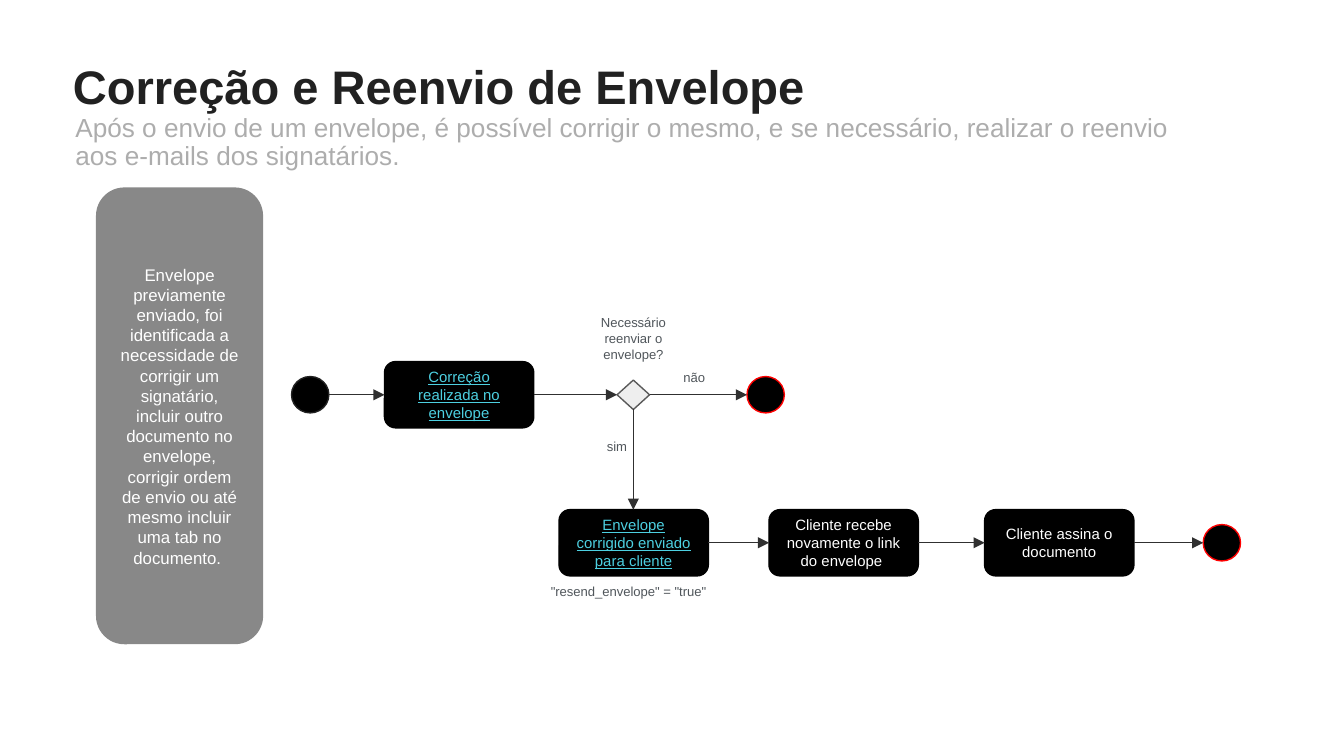
from lxml import etree
from pptx import Presentation
from pptx.dml.color import RGBColor
from pptx.enum.shapes import MSO_CONNECTOR, MSO_SHAPE
from pptx.enum.text import MSO_ANCHOR, MSO_AUTO_SIZE, PP_ALIGN
from pptx.oxml.ns import qn
from pptx.util import Pt

LEFT, CENTER = PP_ALIGN.LEFT, PP_ALIGN.CENTER
TOP, MIDDLE = MSO_ANCHOR.TOP, MSO_ANCHOR.MIDDLE
FIT_SHAPE = MSO_AUTO_SIZE.SHAPE_TO_FIT_TEXT
ROUNDED, OVAL = MSO_SHAPE.ROUNDED_RECTANGLE, MSO_SHAPE.OVAL
DECISION = MSO_SHAPE.FLOWCHART_DECISION
STRAIGHT = MSO_CONNECTOR.STRAIGHT

WHITE = RGBColor(0xFF, 0xFF, 0xFF)
BLACK = RGBColor(0x00, 0x00, 0x00)
INK = RGBColor(0x21, 0x21, 0x21)
SUBTITLE_GRAY = RGBColor(0xAD, 0xAD, 0xAD)
PANEL_GRAY = RGBColor(0x88, 0x88, 0x88)
LABEL_GRAY = RGBColor(0x50, 0x56, 0x5B)
ARROW_GRAY = RGBColor(0x30, 0x30, 0x30)
DIAMOND_FILL = RGBColor(0xEE, 0xEE, 0xEE)
DIAMOND_LINE = RGBColor(0x59, 0x59, 0x59)
CYAN = RGBColor(0x4D, 0xD0, 0xE1)
RED = RGBColor(0xFF, 0x00, 0x00)

FONT = "Arial"
INSET = 7.2
LINE_WIDTH = 0.75
UPPER_ROW, LOWER_ROW = 211.5, 290.8
STEP_WIDTH, STEP_HEIGHT = 80, 35.5
EVENT_WIDTH, EVENT_HEIGHT = 20, 19.5
DIAMOND_WIDTH, DIAMOND_HEIGHT = 17.4, 15.8
START_X, DECISION_X, NO_END_X, YES_END_X = 166.2, 339.3, 410.2, 654.6
CORRECTION_X, RESEND_X, RECEIVE_X, SIGN_X = 206, 299.5, 412, 527.5


def write_text(shape, text, size, color, align=LEFT, anchor=TOP, inset=INSET,
               top_inset=None, bold=None, underline=None, spacing=None):
    frame = shape.text_frame
    frame.word_wrap = True
    frame.vertical_anchor = anchor
    frame.margin_left = frame.margin_right = frame.margin_bottom = Pt(inset)
    frame.margin_top = Pt(inset if top_inset is None else top_inset)
    paragraph = frame.paragraphs[0]
    paragraph.alignment = align
    if spacing:
        paragraph.line_spacing = spacing
    run = paragraph.add_run()
    run.text = text
    run.font.name = FONT
    run.font.size = Pt(size)
    run.font.color.rgb = color
    run.font.bold = bold
    run.font.underline = underline


def add_text(slide, left, top, width, height, *content, **options):
    box = slide.shapes.add_textbox(Pt(left), Pt(top), Pt(width), Pt(height))
    write_text(box, *content, **options)
    return box


def add_label(slide, left, top, width, height, text, align=LEFT):
    box = add_text(slide, left, top, width, height, text, 7, LABEL_GRAY, align=align)
    box.text_frame.auto_size = FIT_SHAPE


def add_figure(slide, kind, left, center_y, width, height, fill, line):
    shape = slide.shapes.add_shape(
        kind, Pt(left), Pt(center_y - height / 2), Pt(width), Pt(height))
    shape.shadow.inherit = False
    shape.fill.solid()
    shape.fill.fore_color.rgb = fill
    shape.line.color.rgb = line
    shape.line.width = Pt(LINE_WIDTH)
    return shape


def add_step(slide, left, center_y, text, linked=False):
    step = add_figure(slide, ROUNDED, left, center_y, STEP_WIDTH, STEP_HEIGHT, BLACK, BLACK)
    write_text(step, text, 8, CYAN if linked else WHITE, align=CENTER,
               anchor=MIDDLE, underline=linked or None)


def add_event(slide, center_x, center_y, line):
    add_figure(slide, OVAL, center_x - EVENT_WIDTH / 2, center_y,
               EVENT_WIDTH, EVENT_HEIGHT, BLACK, line)


def add_arrow(slide, start_x, start_y, end_x, end_y):
    arrow = slide.shapes.add_connector(
        STRAIGHT, Pt(start_x), Pt(start_y), Pt(end_x), Pt(end_y))
    arrow.line.color.rgb = ARROW_GRAY
    arrow.line.width = Pt(LINE_WIDTH)
    etree.SubElement(arrow.line._get_or_add_ln(), qn("a:tailEnd"), type="triangle")
    etree.SubElement(arrow._element.spPr, qn("a:effectLst"))


def add_heading(slide):
    add_text(slide, 32, 21, 671, 40, "Correção e Reenvio de Envelope", 25.2, INK,
             bold=True, top_inset=10)
    add_text(slide, 40.4, 61.4, 597.6, 19.4,
             "Após o envio de um envelope, é possível corrigir o mesmo, "
             "e se necessário, realizar o reenvio aos e-mails dos signatários.",
             14, SUBTITLE_GRAY, inset=0, spacing=0.9)


def add_context_panel(slide):
    panel = add_figure(slide, ROUNDED, 51.8, 222.8, 88.8, 244, PANEL_GRAY, PANEL_GRAY)
    write_text(panel,
               "Envelope previamente enviado, foi identificada a necessidade de "
               "corrigir um signatário, incluir outro documento no envelope, "
               "corrigir ordem de envio ou até mesmo incluir uma tab no documento. ",
               9, WHITE, align=CENTER, anchor=MIDDLE)


def add_flow(slide):
    add_event(slide, START_X, UPPER_ROW, INK)
    add_step(slide, CORRECTION_X, UPPER_ROW, "Correção realizada no envelope", linked=True)
    add_figure(slide, DECISION, DECISION_X - DIAMOND_WIDTH / 2, UPPER_ROW,
               DIAMOND_WIDTH, DIAMOND_HEIGHT, DIAMOND_FILL, DIAMOND_LINE)
    add_event(slide, NO_END_X, UPPER_ROW, RED)

    add_step(slide, RESEND_X, LOWER_ROW, "Envelope corrigido enviado para cliente", linked=True)
    add_step(slide, RECEIVE_X, LOWER_ROW, "Cliente recebe novamente o link do envelope ")
    add_step(slide, SIGN_X, LOWER_ROW, "Cliente assina o documento")
    add_event(slide, YES_END_X, LOWER_ROW, RED)

    event_radius, diamond_half = EVENT_WIDTH / 2, DIAMOND_WIDTH / 2
    for row, start, end in (
        (UPPER_ROW, START_X + event_radius, CORRECTION_X),
        (UPPER_ROW, CORRECTION_X + STEP_WIDTH, DECISION_X - diamond_half),
        (UPPER_ROW, DECISION_X + diamond_half, NO_END_X - event_radius),
        (LOWER_ROW, RESEND_X + STEP_WIDTH, RECEIVE_X),
        (LOWER_ROW, RECEIVE_X + STEP_WIDTH, SIGN_X),
        (LOWER_ROW, SIGN_X + STEP_WIDTH, YES_END_X - event_radius),
    ):
        add_arrow(slide, start, row, end, row)
    add_arrow(slide, DECISION_X, UPPER_ROW + DIAMOND_HEIGHT / 2,
              DECISION_X, LOWER_ROW - STEP_HEIGHT / 2)


def add_labels(slide):
    add_label(slide, 312, 161.5, 54.7, 40.3, "Necessário reenviar o envelope?", CENTER)
    add_label(slide, 359, 193.7, 29.5, 23, "não")
    add_label(slide, 318, 230.5, 29.5, 23, "sim")
    add_label(slide, 288, 308.5, 102.2, 23, '"resend_envelope" = "true"')


def main():
    presentation = Presentation()
    presentation.slide_width, presentation.slide_height = Pt(720), Pt(405)
    slide = presentation.slides.add_slide(presentation.slide_layouts[6])
    add_heading(slide)
    add_context_panel(slide)
    add_flow(slide)
    add_labels(slide)
    presentation.save("out.pptx")


if __name__ == "__main__":
    main()
